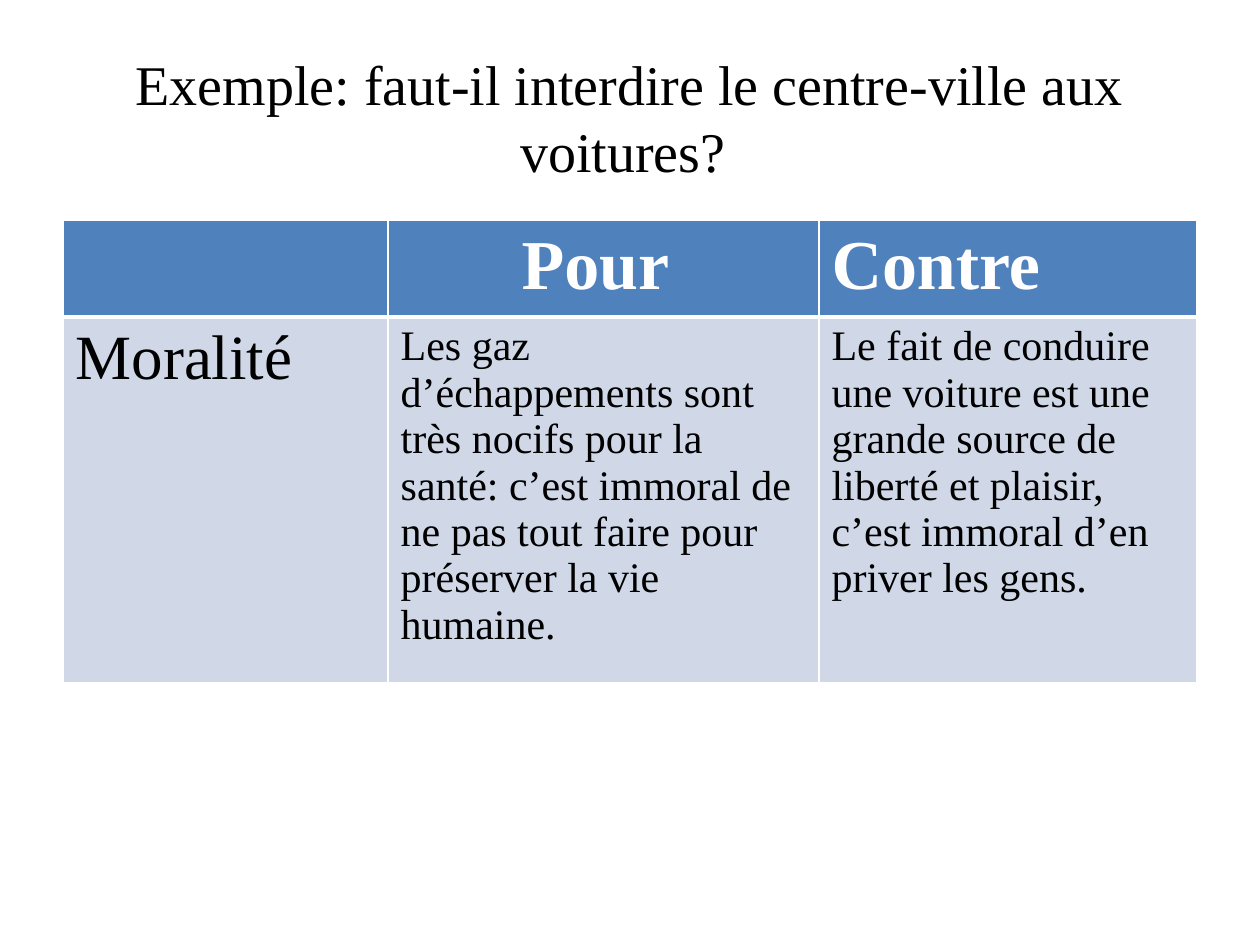
import pptx
import pptx.util
import pptx.dml.color
import pptx.enum.text
import lxml.etree
import pptx.oxml.ns

Inches = pptx.util.Inches
Pt = pptx.util.Pt
ALIGN = pptx.enum.text.PP_ALIGN
FONT = "Times New Roman"
COLOURS = {"text": "000000", "white": "FFFFFF", "header": "4F81BD", "body": "D0D8E8"}
COLUMN_WIDTHS = [2.58, 3.42, 3]
ROW_HEIGHTS = [0.7, 2.69]
ROWS = [
    [("", 18, ALIGN.LEFT), ("Pour ", 40, ALIGN.CENTER), ("Contre", 40, ALIGN.LEFT)],
    [
        ("Moralité", 36, ALIGN.LEFT),
        ("Les gaz d’échappements sont très nocifs pour la santé: c’est immoral de "
         "ne pas tout faire pour préserver la vie humaine.", 24, ALIGN.LEFT),
        ("Le fait de conduire une voiture est une grande source de liberté et "
         "plaisir, c’est immoral d’en priver les gens.", 24, ALIGN.LEFT),
    ],
]


def colour(name):
    return pptx.dml.color.RGBColor.from_string(COLOURS[name])


def write_text(frame, text, size, align, colour_name, bold=False):
    frame.text = text
    paragraph = frame.paragraphs[0]
    paragraph.alignment = align
    for span in paragraph.runs:
        span.font.name = FONT
        span.font.size = Pt(size)
        span.font.bold = bold
        span.font.color.rgb = colour(colour_name)


def set_borders(cell, widths):
    qn = pptx.oxml.ns.qn
    properties = cell._tc.get_or_add_tcPr()
    for side, width in widths.items():
        line = lxml.etree.SubElement(properties, qn("a:ln" + side), w=str(Pt(width)))
        fill = lxml.etree.SubElement(line, qn("a:solidFill"))
        lxml.etree.SubElement(fill, qn("a:srgbClr"), val=COLOURS["white"])


def add_title(page, text):
    box = page.shapes.add_textbox(Inches(0.5), Inches(0.3), Inches(9), Inches(1.25))
    frame = box.text_frame
    frame.word_wrap = True
    frame.vertical_anchor = pptx.enum.text.MSO_ANCHOR.MIDDLE
    write_text(frame, text, 32, ALIGN.CENTER, "text")


def add_arguments_table(page):
    table = page.shapes.add_table(
        len(ROWS), len(COLUMN_WIDTHS), Inches(0.5), Inches(1.75),
        Inches(sum(COLUMN_WIDTHS)), Inches(sum(ROW_HEIGHTS))).table
    for column, width in zip(table.columns, COLUMN_WIDTHS):
        column.width = Inches(width)
    for row, height in zip(table.rows, ROW_HEIGHTS):
        row.height = Inches(height)
    for row_index, entries in enumerate(ROWS):
        header = row_index == 0
        for column_index, (text, size, align) in enumerate(entries):
            cell = table.cell(row_index, column_index)
            set_borders(cell, {"L": 1, "R": 1, "T": 1 if header else 3, "B": 3 if header else 1})
            cell.fill.solid()
            cell.fill.fore_color.rgb = colour("header" if header else "body")
            write_text(cell.text_frame, text, size, align, "white" if header else "text", header)


def main():
    deck = pptx.Presentation()
    deck.slide_width = Inches(10)
    deck.slide_height = Inches(7.5)
    page = deck.slides.add_slide(deck.slide_layouts[6])
    add_title(page, "Exemple: faut-il interdire le centre-ville aux voitures? ")
    add_arguments_table(page)
    deck.save("out.pptx")


if __name__ == "__main__":
    main()
